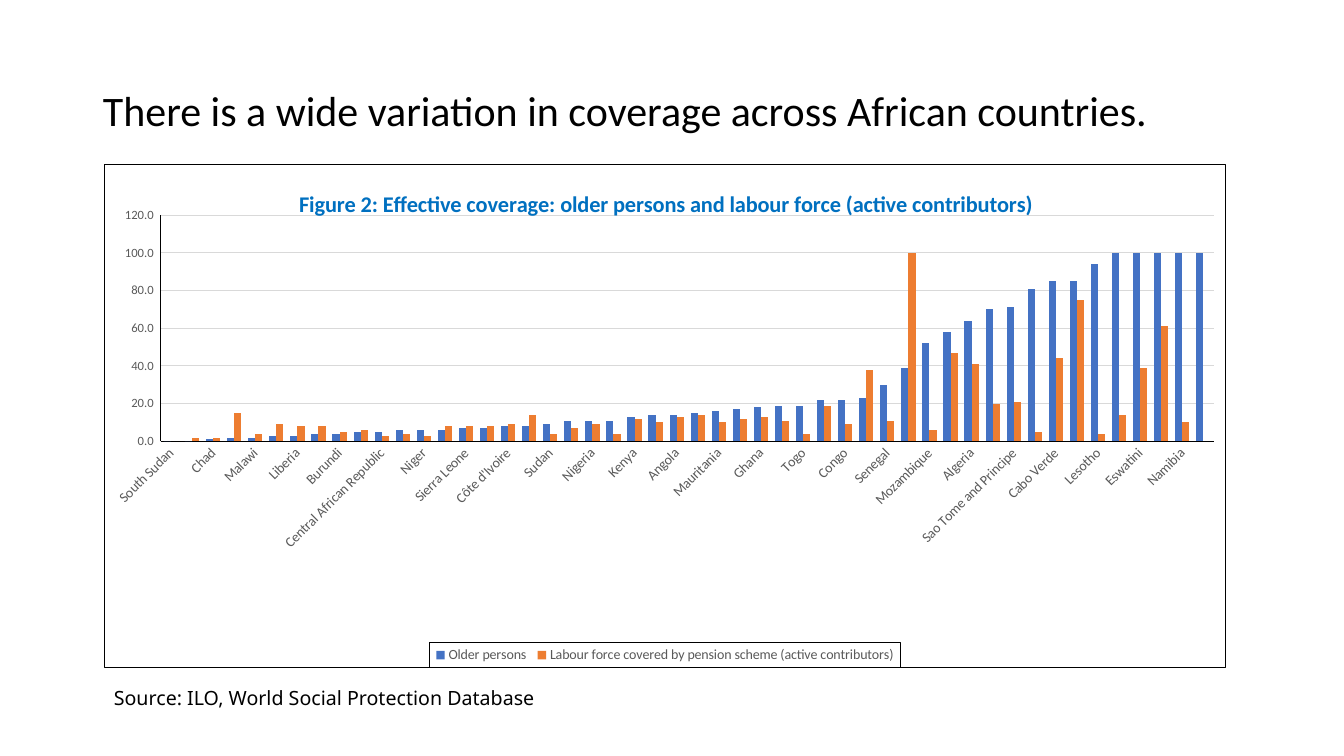
from dataclasses import dataclass

from lxml.etree import SubElement
from pptx import Presentation
from pptx.chart.data import CategoryChartData as ChartData
from pptx.dml.color import RGBColor
from pptx.enum.chart import XL_CHART_TYPE as Kind, XL_LEGEND_POSITION as Spot, XL_TICK_MARK as Tick
from pptx.enum.text import MSO_ANCHOR as Anchor, MSO_AUTO_SIZE as Fit, PP_ALIGN as Align
from pptx.oxml import parse_xml
from pptx.oxml.ns import nsdecls, qn
from pptx.util import Cm, Pt

BLACK = RGBColor(0x00, 0x00, 0x00)
GREY = RGBColor(0x59, 0x59, 0x59)
PALE = RGBColor(0xD9, 0xD9, 0xD9)
BLUE = RGBColor(0x44, 0x72, 0xC4)
ORANGE = RGBColor(0xED, 0x7D, 0x31)
HEAD_BLUE = RGBColor(0x00, 0x70, 0xC0)
SANS = "Calibri"


@dataclass
class Group:
    name: str
    color: RGBColor
    rates: list


LANDS = [
    "South Sudan", "Guinea-Bissau", "Chad", "Guinea", "Malawi", "Rwanda", "Liberia",
    "Ethiopia", "Burundi", "Madagascar", "Central African Republic",
    "Tanzania, United Republic of", "Niger", "Burkina Faso", "Sierra Leone", "Mali",
    "Côte d'Ivoire", "Zambia", "Sudan", "Benin", "Nigeria", "Uganda", "Kenya",
    "Djibouti", "Angola", "Congo, Democratic Republic of the", "Mauritania", "Gambia",
    "Ghana", "Cameroon", "Togo", "Zimbabwe", "Congo", "Morocco", "Senegal", "Gabon",
    "Mozambique", "Egypt", "Algeria", "Libya", "Sao Tome and Principe", "South Africa",
    "Cabo Verde", "Tunisia", "Lesotho", "Botswana", "Eswatini", "Mauritius", "Namibia",
    "Seychelles",
]
GROUPS = [
    Group("Older persons", BLUE, [
        0, 0, 1, 2, 2, 3, 3, 4, 4, 5, 5, 6, 6, 6, 7, 7, 8, 8, 9, 11, 11, 11, 13, 14, 14,
        15, 16, 17, 18, 19, 19, 22, 22, 23, 30, 39, 52, 58, 64, 70, 71, 81, 85, 85, 94,
        100, 100, 100, 100, 100]),
    Group("Labour force covered by pension scheme (active contributors)", ORANGE, [
        None, 2, 2, 15, 4, 9, 8, 8, 5, 6, 3, 4, 3, 8, 8, 8, 9, 14, 4, 7, 9, 4, 12, 10, 13,
        14, 10, 12, 13, 11, 4, 19, 9, 38, 11, 100, 6, 47, 41, 20, 21, 5, 44, 75, 4,
        14, 39, 61, 10, None]),
]


def style(font, size: float, color: RGBColor, face: str = SANS, bold: bool = False) -> None:
    font.size = Pt(size)
    font.name = face
    font.bold = bold
    font.color.rgb = color


def write(frame, text: str, *, size: float, color: RGBColor = BLACK, face: str = SANS,
          bold: bool = False, align=None, before: float = 0, space: float = 1) -> None:
    frame.text = text
    line = frame.paragraphs[0]
    line.alignment = align
    line.space_before = Pt(before)
    line.line_spacing = space
    style(line.runs[0].font, size, color, face, bold)


def place(shape, left: float, top: float, width: float, height: float) -> None:
    shape.left, shape.top = Cm(left), Cm(top)
    shape.width, shape.height = Cm(width), Cm(height)


def lay_out(node, index: int, inner: bool = False, **sides: float) -> None:
    for old in node.findall(qn("c:layout")):
        node.remove(old)
    layout = parse_xml(f"<c:layout {nsdecls('c')}><c:manualLayout/></c:layout>")
    if inner:
        SubElement(layout[0], qn("c:layoutTarget")).set("val", "inner")
    for side in ("x", "y"):
        SubElement(layout[0], qn(f"c:{side}Mode")).set("val", "edge")
    for side, share in sides.items():
        SubElement(layout[0], qn(f"c:{side}")).set("val", str(share))
    node.insert(index, layout)


def frame_in(node) -> None:
    node.addnext(parse_xml(
        f"<c:spPr {nsdecls('c', 'a')}><a:noFill/><a:ln w='9525'><a:solidFill>"
        f"<a:srgbClr val='{BLACK}'/></a:solidFill></a:ln></c:spPr>"))


def rule(line, color: RGBColor) -> None:
    line.color.rgb = color
    line.width = Pt(0.75)


def set_axis(axis, size: float) -> None:
    axis.major_tick_mark = axis.minor_tick_mark = Tick.NONE
    style(axis.tick_labels.font, size, GREY)
    rule(axis.format.line, BLACK)


def add_graph(slide) -> None:
    data = ChartData()
    data.categories = LANDS
    for group in GROUPS:
        data.add_series(group.name, group.rates)
    chart = slide.shapes.add_chart(
        Kind.COLUMN_CLUSTERED, Cm(2.62), Cm(4.14), Cm(28.27), Cm(12.7), data).chart
    style(chart.font, 10, BLACK)

    chart.has_title = True
    write(chart.chart_title.text_frame,
          "Figure 2: Effective coverage: older persons and labour force (active contributors)",
          size=16, color=HEAD_BLUE, bold=True)
    chart.has_legend = True
    chart.legend.position = Spot.BOTTOM
    chart.legend.include_in_layout = False
    style(chart.legend.font, 10, GREY)

    plot = chart.plots[0]
    plot.gap_width = 96
    plot.overlap = 0
    plot.vary_by_categories = False
    for bars, group in zip(plot.series, GROUPS):
        bars.invert_if_negative = False
        bars.format.fill.solid()
        bars.format.fill.fore_color.rgb = group.color

    lands, rates = chart.category_axis, chart.value_axis
    set_axis(lands, 10)
    set_axis(rates, 9)
    lands.format.line.width = Pt(0.75)
    rates.minimum_scale, rates.maximum_scale, rates.major_unit = 0, 120, 20
    rates.tick_labels.number_format = r"#,##0.0_ ;\-#,##0.0\ "
    rates.tick_labels.number_format_is_linked = False
    rule(rates.major_gridlines.format.line, PALE)

    root = chart.element
    body = root.find(qn("c:chart"))
    frame_in(body)
    frame_in(body.find(qn("c:legend")).find(qn("c:overlay")))
    lay_out(body.find(qn("c:title")), 1, x=0.17, y=0.04)
    lay_out(body.find(qn("c:legend")), 1, x=0.29, y=0.95, w=0.42, h=0.05)
    lay_out(body.find(qn("c:plotArea")), 0, inner=True, x=0.05, y=0.1, w=0.94, h=0.45)
    axis = body.find(qn("c:plotArea")).find(qn("c:catAx"))
    axis.find(qn("c:txPr")).find(qn("a:bodyPr")).set("rot", "-2700000")
    skip = parse_xml(f"<c:tickLblSkip {nsdecls('c')} val='2'/>")
    axis.find(qn("c:noMultiLvlLbl")).addprevious(skip)


def main() -> None:
    deck = Presentation()
    deck.slide_width, deck.slide_height = Cm(33.87), Cm(19.05)
    slide = deck.slides.add_slide(deck.slide_layouts[5])

    title = slide.shapes.title
    place(title, 2.34, 1.52, 29.21, 2.31)
    write(title.text_frame, "There is a wide variation in coverage across African countries.",
          size=30, align=Align.LEFT, before=6, space=1.14)
    title.text_frame.vertical_anchor = Anchor.MIDDLE
    title.text_frame.auto_size = Fit.NONE

    add_graph(slide)

    source = slide.shapes.add_textbox(Cm(2.62), Cm(17.15), Cm(21.01), Cm(0.86))
    source.text_frame.word_wrap = True
    write(source.text_frame, "Source: ILO, World Social Protection Database",
          size=14, face="Noto Sans")

    deck.save("out.pptx")


if __name__ == "__main__":
    main()
